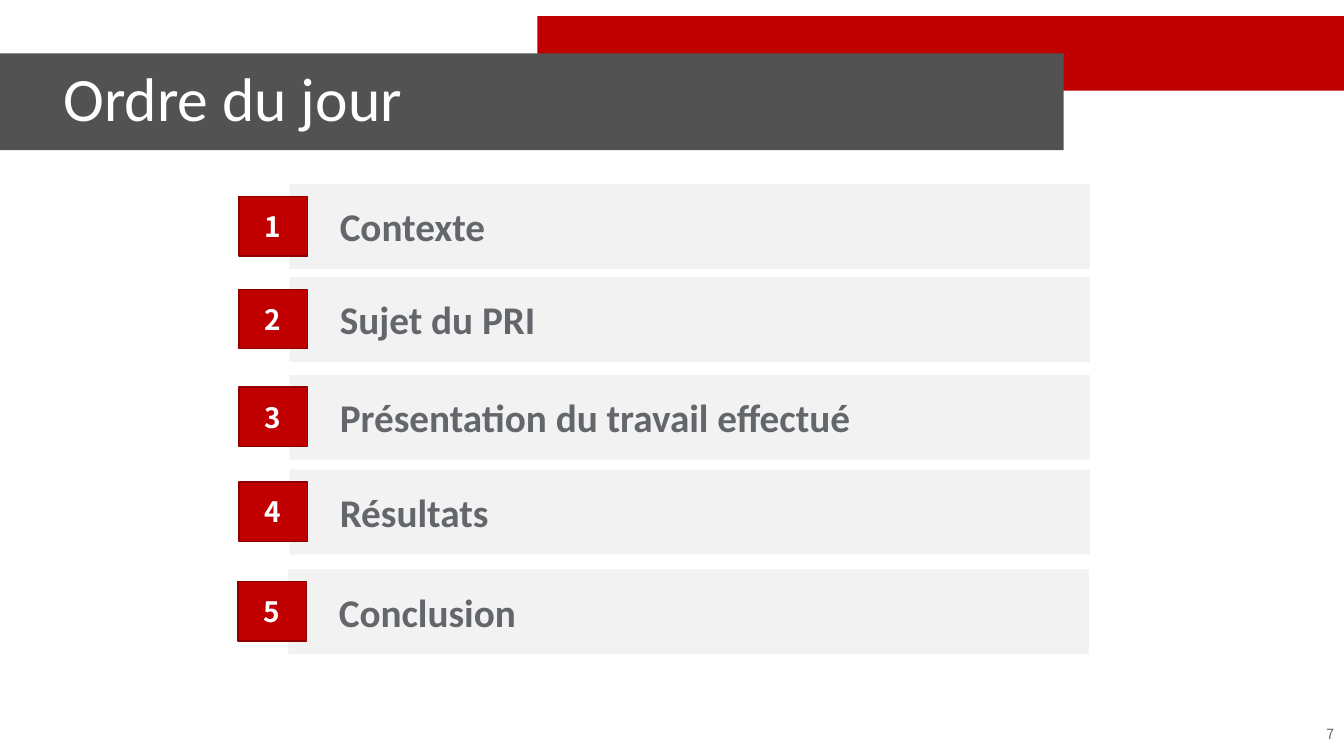
from pptx import Presentation
from pptx.dml.color import RGBColor
from pptx.enum.shapes import MSO_SHAPE as SHAPE
from pptx.enum.text import MSO_ANCHOR as ANCHOR, PP_ALIGN as ALIGN
from pptx.util import Inches, Pt

COLORS = {"red": "C00000", "dark_red": "8E0000", "gray": "525252",
          "light": "F2F2F2", "text": "63666A", "white": "FFFFFF"}
FORMATS = {
    "title": {"name": "Calibri", "size": Pt(44), "color": "white"},
    "topic": {"name": "Calibri", "size": Pt(28), "bold": True, "color": "text"},
    "number": {"name": "Noto Sans CJK KR", "size": Pt(20), "bold": True, "color": "white"},
    "page": {"name": "Noto Sans CJK KR", "size": Pt(10), "color": "text"},
}
AGENDA = [
    ("Contexte", 2.37, 1.83),
    ("Sujet du PRI", 2.37, 2.75),
    ("Présentation du travail effectué", 2.37, 3.72),
    ("Résultats", 2.37, 4.66),
    ("Conclusion", 2.36, 5.65),
]


def rgb(name):
    return RGBColor.from_string(COLORS[name])


def add_rect(shapes, box, fill, line=None):
    sp = shapes.add_shape(SHAPE.RECTANGLE, *map(Inches, box))
    sp.shadow.inherit = False
    sp.fill.solid()
    sp.fill.fore_color.rgb = rgb(fill)
    if line:
        sp.line.color.rgb = rgb(line)
        sp.line.width = Pt(1)
    else:
        sp.line.fill.background()
    return sp


def write(sp, text, style, align=ALIGN.LEFT, inset=None):
    tf = sp.text_frame
    tf.word_wrap = True
    tf.vertical_anchor = ANCHOR.MIDDLE
    if inset is not None:
        for side in ("left", "top", "right", "bottom"):
            setattr(tf, f"margin_{side}", Inches(inset))
    p = tf.paragraphs[0]
    p.alignment = align
    r = p.add_run()
    r.text = text
    for key, value in FORMATS[style].items():
        if key == "color":
            r.font.color.rgb = rgb(value)
        else:
            setattr(r.font, key, value)
    return p


def add_text(shapes, box, *args, **kwargs):
    return write(shapes.add_textbox(*map(Inches, box)), *args, **kwargs)


def add_header(s, width, height):
    add_rect(s.shapes, (width - 8, 0.16, 8, 0.74), "red")
    add_rect(s.shapes, (0, 0.53, 10.55, 0.96), "gray")
    p = add_text(s.shapes, (0.53, 0.35, 10.03, 1.32), "Ordre du jour", "title")
    p.line_spacing = 0.9
    add_text(s.shapes, (width - 3, height - 0.42, 3, 0.4), "7", "page", ALIGN.RIGHT)


def add_agenda_row(s, left, top, number, topic):
    shapes = s.shapes.add_group_shape().shapes
    add_rect(shapes, (left + 0.5, top, 7.94, 0.84), "light")
    add_text(shapes, (left + 0.96, top + 0.14, 7.21, 0.55), topic, "topic", inset=0.04)
    sp = add_rect(shapes, (left, top + 0.12, 0.68, 0.59), "red", "dark_red")
    write(sp, str(number), "number", ALIGN.CENTER, inset=0)


def main():
    prs = Presentation()
    width, height = 13.33, 7.5
    prs.slide_width, prs.slide_height = Inches(width), Inches(height)
    s = prs.slides.add_slide(prs.slide_layouts[6])
    add_header(s, width, height)
    for number, (topic, left, top) in enumerate(AGENDA, 1):
        add_agenda_row(s, left, top, number, topic)
    prs.save("out.pptx")


if __name__ == "__main__":
    main()
